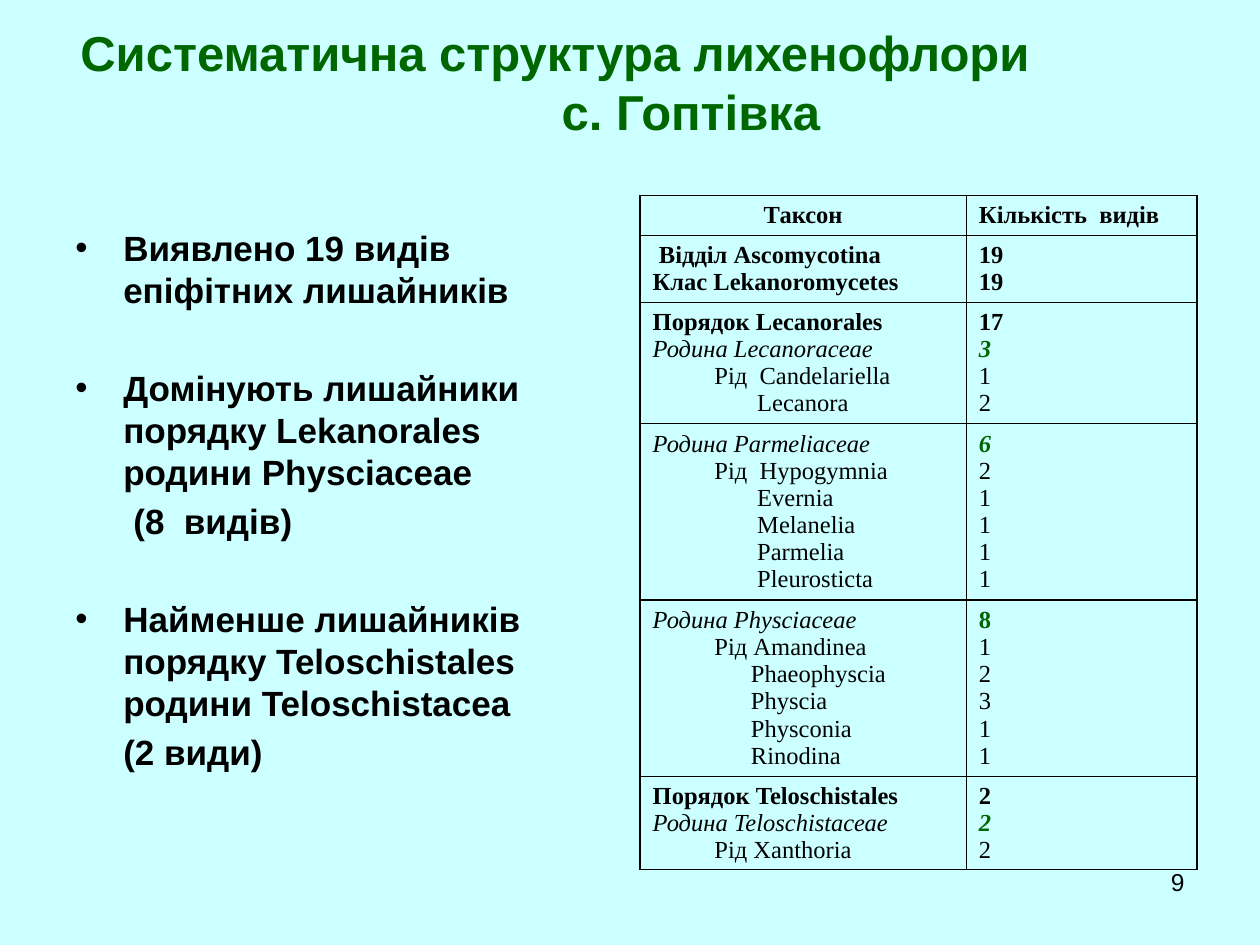
"""Build a slide on the systematic structure of a lichen flora."""
from lxml import etree
from pptx import Presentation, util as u
from pptx.dml.color import RGBColor
from pptx.enum import text
from pptx.oxml.ns import qn

BACK = RGBColor(0xCC, 0xFF, 0xFF)
GREEN = RGBColor(0x00, 0x66, 0x00)
BLACK = RGBColor(0, 0, 0)
SANS, SERIF = "Arial", "Times New Roman"
CENTER, RIGHT = text.PP_ALIGN.CENTER, text.PP_ALIGN.RIGHT
MIDDLE = text.MSO_ANCHOR.MIDDLE

PLAIN = {"bold": False, "italic": False}
BOLD = {"bold": True, "italic": False}
ITALIC = {"bold": False, "italic": True}
GREEN_BOLD = {"bold": True, "italic": False, "color": GREEN}
GREEN_ITALIC = {"bold": True, "italic": True, "color": GREEN}

TITLE = [("Систематична структура лихенофлори", 0.04), ("с. Гоптівка", 3.86)]
FINDINGS = [
    ("Виявлено 19 видів епіфітних лишайників", None, 0),
    ("Домінують лишайники порядку Lekanorales родини Physciaceae", None, 32),
    ("(8  видів)", 0.46, 4),
    ("Найменше лишайників порядку Teloschistales родини Teloschistacea", None, 32),
    ("(2 види)", 0.38, 4),
]
HANG = 0.38
HEADER = ("Таксон", "Кількість  видів")
GENUS, SPECIES, SPECIES_NEAR = 0.49, 0.83, 0.78
GROUPS = [
    [("Відділ Ascomycotina", 0.05, BOLD, "19", BOLD),
     ("Клас Lekanoromycetes", 0, BOLD, "19", BOLD)],
    [("Порядок Lecanorales", 0, BOLD, "17", BOLD),
     ("Родина Lecanoraceae", 0, ITALIC, "3", GREEN_ITALIC),
     ("Рід  Candelariella", GENUS, PLAIN, "1", PLAIN),
     ("Lecanora", SPECIES, PLAIN, "2", PLAIN)],
    [("Родина Parmeliaceae", 0, ITALIC, "6", GREEN_ITALIC),
     ("Рід  Hypogymnia", GENUS, PLAIN, "2", PLAIN),
     ("Evernia", SPECIES, PLAIN, "1", PLAIN),
     ("Melanelia", SPECIES, PLAIN, "1", PLAIN),
     ("Parmelia", SPECIES, PLAIN, "1", PLAIN),
     ("Pleurosticta", SPECIES, PLAIN, "1", PLAIN)],
    [("Родина Physciaceae", 0, ITALIC, "8", GREEN_BOLD),
     ("Рід Amandinea", GENUS, PLAIN, "1", PLAIN),
     ("Phaeophyscia", SPECIES_NEAR, PLAIN, "2", PLAIN),
     ("Physcia", SPECIES_NEAR, PLAIN, "3", PLAIN),
     ("Physconia", SPECIES_NEAR, PLAIN, "1", PLAIN),
     ("Rinodina", SPECIES_NEAR, PLAIN, "1", PLAIN)],
    [("Порядок Teloschistales", 0, BOLD, "2", BOLD),
     ("Родина Teloschistaсеае", 0, ITALIC, "2", GREEN_ITALIC),
     ("Рід Xanthoria", GENUS, PLAIN, "2", PLAIN)],
]
COLUMNS = (2.59, 1.83)
ROWS = (0.32, 0.53, 0.96, 1.4, 1.4, 0.74)
CELL = {"margin_top": 0, "margin_bottom": 0, "vertical_anchor": MIDDLE}


def add_line(tf, i, words, size, font, style, left=0, first=0, align=None, before=0):
    p = tf.paragraphs[0] if i == 0 else tf.add_paragraph()
    p.alignment, p.space_before = align, u.Pt(before)
    pPr = p._p.get_or_add_pPr()
    pPr.set("marL", str(u.Inches(left)))
    pPr.set("indent", str(u.Inches(first)))
    r = p.add_run()
    r.text = words
    look = {"size": u.Pt(size), "name": font, "color": BLACK} | style
    r.font.color.rgb = look.pop("color")
    for name, value in look.items():
        setattr(r.font, name, value)
    return pPr


def add_box(s, *place):
    tf = s.shapes.add_textbox(*map(u.Inches, place)).text_frame
    tf.word_wrap = True
    return tf


def add_borders(cell):
    tcPr = cell._tc.get_or_add_tcPr()
    for i, side in enumerate(("lnL", "lnR", "lnT", "lnB")):
        ln = etree.Element(qn("a:" + side), w=str(u.Pt(1)))
        fill = etree.SubElement(ln, qn("a:solidFill"))
        etree.SubElement(fill, qn("a:srgbClr"), val=str(BLACK))
        tcPr.insert(i, ln)


def add_taxa(s):
    place = (5.08, 1.55, sum(COLUMNS), sum(ROWS))
    table = s.shapes.add_table(len(ROWS), len(COLUMNS), *map(u.Inches, place)).table
    table.first_row = table.horz_banding = False
    for column, width in zip(table.columns, COLUMNS):
        column.width = u.Inches(width)
    for row, height in zip(table.rows, ROWS):
        row.height = u.Inches(height)
    for cell in table.iter_cells():
        for name, value in CELL.items():
            setattr(cell, name, value)
        cell.fill.background()
        add_borders(cell)
    for c, words in enumerate(HEADER):
        add_line(table.cell(0, c).text_frame, 0, words, 14, SERIF, BOLD,
                 align=CENTER if c == 0 else None)
    for row, group in enumerate(GROUPS, 1):
        for i, (taxon, left, style, count, count_style) in enumerate(group):
            add_line(table.cell(row, 0).text_frame, i, taxon, 14, SERIF, style, left)
            add_line(table.cell(row, 1).text_frame, i, count, 14, SERIF, count_style)


def main():
    prs = Presentation()
    prs.slide_width, prs.slide_height = u.Inches(10), u.Inches(7.5)
    s = prs.slides.add_slide(prs.slide_layouts[6])
    s.background.fill.solid()
    s.background.fill.fore_color.rgb = BACK

    add_line(add_box(s, 7.17, 6.83, 2.33, 0.52), 0, "9", 14, SANS, PLAIN, align=RIGHT)

    tf = add_box(s, 0.5, 0.3, 9, 0.69)
    tf.vertical_anchor = MIDDLE
    for i, (words, left) in enumerate(TITLE):
        add_line(tf, i, words, 28, SANS, GREEN_BOLD, left)

    tf = add_box(s, 0.5, 1.75, 4.42, 4.95)
    for i, (words, left, before) in enumerate(FINDINGS):
        bullet = left is None
        pPr = add_line(tf, i, words, 20, SANS, BOLD, HANG if bullet else left,
                       -HANG if bullet else 0, before=before)
        if bullet:
            etree.SubElement(pPr, qn("a:buFont"), typeface=SANS)
            etree.SubElement(pPr, qn("a:buChar"), char="•")

    add_taxa(s)
    prs.save("out.pptx")


if __name__ == "__main__":
    main()
